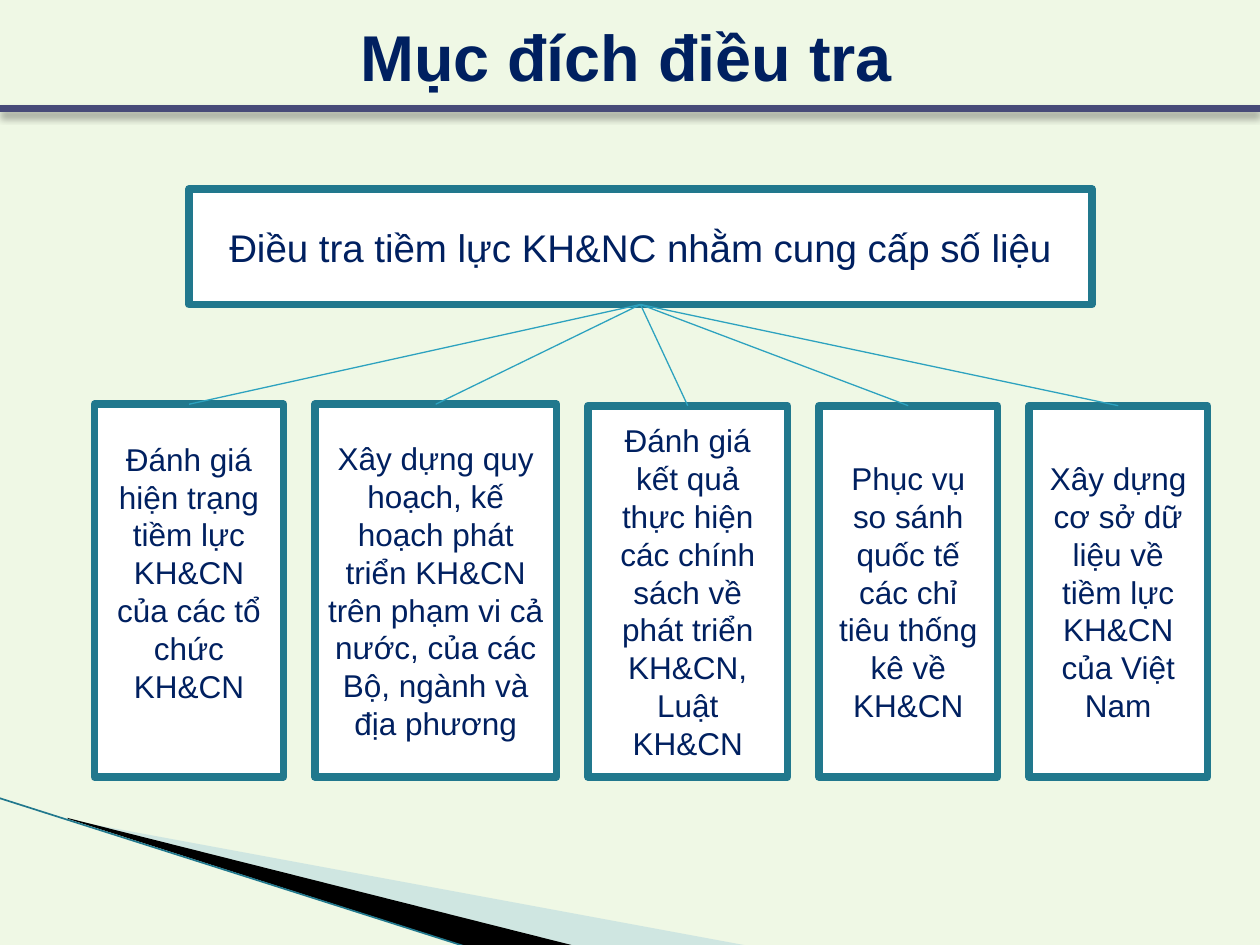
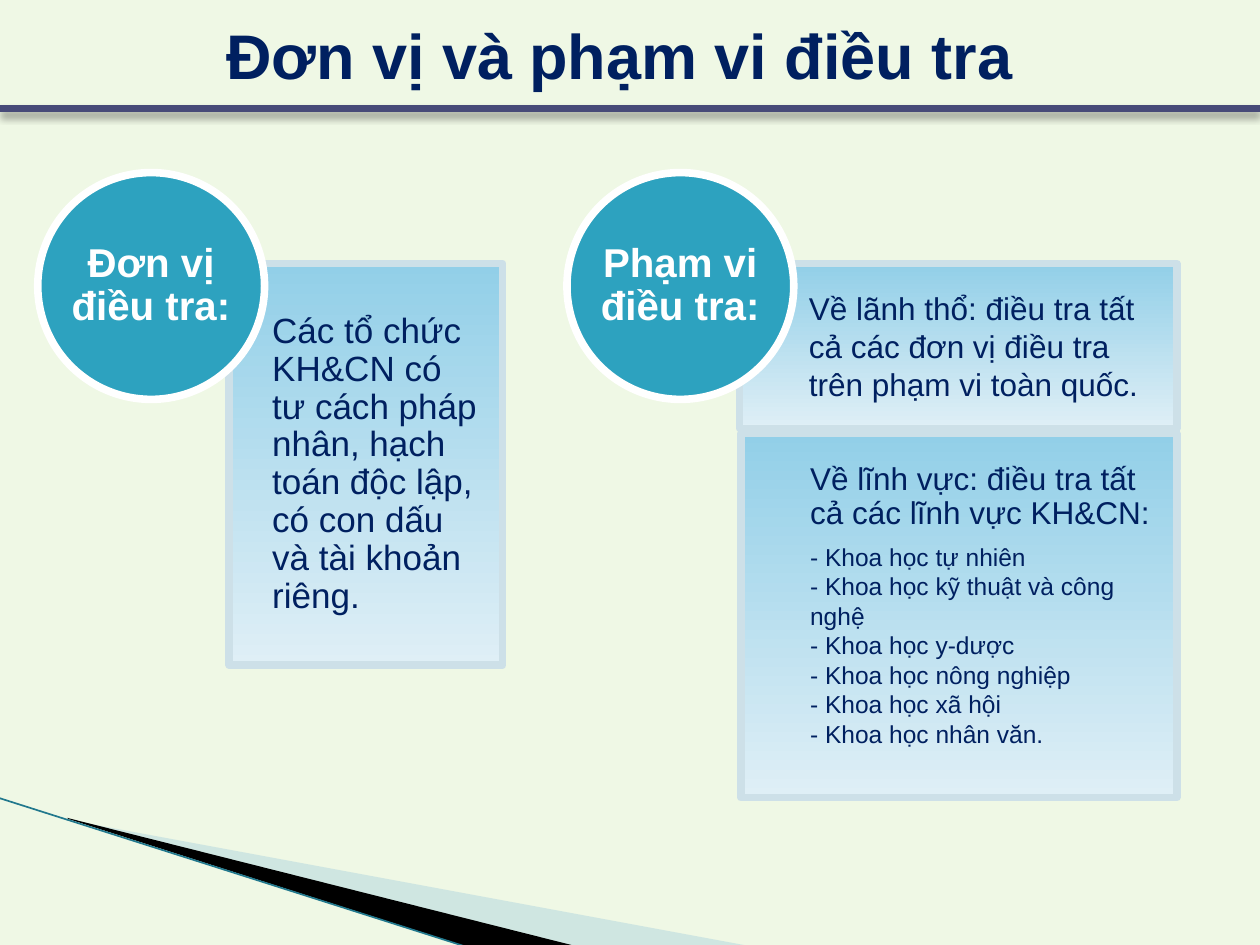
"""Build two slides on the purpose, units and scope of a science survey."""
from lxml import etree
from pptx import Presentation, util as u
from pptx.dml.color import RGBColor
from pptx.enum import shapes, text
from pptx.oxml import parse_xml
from pptx.oxml.ns import nsdecls, qn

rgb = RGBColor.from_string
NAVY, WHITE, TEAL, DARK_TEAL = "002060", "FFFFFF", "2DA2BF", "21788D"
CENTER, LEFT = text.PP_ALIGN.CENTER, text.PP_ALIGN.LEFT
RECT, OVAL = shapes.MSO_SHAPE.RECTANGLE, shapes.MSO_SHAPE.OVAL
STRAIGHT = shapes.MSO_CONNECTOR.STRAIGHT

prs = Presentation()
prs.slide_width, prs.slide_height = u.Inches(10), u.Inches(7.5)
U = prs.slide_width // 120


def write(sp, lines, size=18, color=NAVY, bold=False, align=CENTER,
          spacing=1.0, after=0, insets=(1.2, 0.6, 1.2, 0.6)):
    """Fill a shape with paragraphs; a line may be a (text, format) pair."""
    tf = sp.text_frame
    tf.word_wrap = True
    tf.auto_size = text.MSO_AUTO_SIZE.NONE
    tf.vertical_anchor = text.MSO_ANCHOR.MIDDLE
    tf.margin_left, tf.margin_top, tf.margin_right, tf.margin_bottom = (
        round(v * U) for v in insets)
    for i, line in enumerate(lines):
        p = tf.paragraphs[0] if i == 0 else tf.add_paragraph()
        words, fmt = line if isinstance(line, tuple) else (line, {})
        p.alignment = align
        p.line_spacing = fmt.get("spacing", spacing)
        p.space_after = u.Pt(fmt.get("after", after))
        r = p.add_run()
        r.text = words
        r.font.name, r.font.bold = "Arial", bold
        r.font.size = u.Pt(fmt.get("size", size))
        r.font.color.rgb = rgb(color)


def box(s, kind, grid, fill, line):
    """Add an outlined shape on the grid; a pair of fills makes a gradient."""
    sp = s.shapes.add_shape(kind, *(round(v * U) for v in grid))
    sp.shadow.inherit = False
    if isinstance(fill, tuple):
        sp.fill.gradient()
        sp.fill.gradient_angle = 270
        for stop, c in zip(sp.fill.gradient_stops, fill):
            stop.color.rgb = rgb(c)
    else:
        sp.fill.solid()
        sp.fill.fore_color.rgb = rgb(fill)
    sp.line.color.rgb = rgb(line)
    sp.line.width = u.Pt(4.33)
    return sp


master = prs.slide_master
master.background.fill.solid()
master.background.fill.fore_color.rgb = rgb("EFF8E5")

titles = [("Mục đích điều tra", 37, (5.64, 0.36, 108, 9.96)),
          ("Đơn vị và phạm vi điều tra", 36, (0, 0, 118, 10.32))]
slides = []
for words, size, grid in titles:
    s = prs.slides.add_slide(prs.slide_layouts[5])
    sp = s.shapes.title
    sp.left, sp.top, sp.width, sp.height = (round(v * U) for v in grid)
    write(sp, [words], size=size, bold=True)
    slides.append(s)
purpose, scope = slides

decor = []
wedges = [("A0CBDC", 40, [(6.6, 78.1), (71.4, 90.1), (54.7, 90.1), (6.6, 78)]),
          ("000000", 100, [(6.4, 77.9), (54.8, 90.1), (44.6, 90.2), (6.5, 78)])]
for color, alpha, points in wedges:
    start, *rest = [(round(x * U), round(y * U)) for x, y in points]
    builder = purpose.shapes.build_freeform(*start)
    builder.add_line_segments(rest, close=True)
    sp = builder.convert_to_shape()
    sp.shadow.inherit = False
    sp.line.fill.background()
    sp.fill.solid()
    sp.fill.fore_color.rgb = rgb(color)
    clr = sp._element.spPr.find(".//" + qn("a:srgbClr"))
    etree.SubElement(clr, qn("a:alpha"), val=str(alpha * 1000))
    decor.append(sp)

rules = [((-0.1, 76, 44.5, 90.2), DARK_TEAL, 0.95, ""),
         ((0, 10.32, 120, 10.32), "474B78", 4.33,
          '<a:outerShdw blurRad="50800" dist="38100" dir="5400000">'
          '<a:srgbClr val="000000"><a:alpha val="35000"/></a:srgbClr></a:outerShdw>')]
for ends, color, width, shadow in rules:
    cx = purpose.shapes.add_connector(STRAIGHT, *(round(v * U) for v in ends))
    cx.line.color.rgb = rgb(color)
    cx.line.width = u.Pt(width)
    cx._element.spPr.append(parse_xml(
        f'<a:effectLst {nsdecls("a")}>{shadow}</a:effectLst>'))
    decor.append(cx)
for sp in decor:
    master.shapes._spTree.append(sp._element)

head = box(purpose, RECT, (18, 18, 86, 11), WHITE, DARK_TEAL)
write(head, ["Điều tra tiềm lực KH&NC nhằm cung cấp số liệu"], size=22)
goals = [
    (18, 38.5, 4.1, "Đánh giá hiện trạng tiềm lực KH&CN của các tổ chức KH&CN"),
    (23, 38.5, 0.6, "Xây dựng quy hoạch, kế hoạch phát triển KH&CN trên phạm vi "
                    "cả nước, của các Bộ, ngành và địa phương"),
    (19, 38.64, 0.6, "Đánh giá kết quả thực hiện các chính sách về phát triển "
                     "KH&CN, Luật KH&CN"),
    (17, 38.64, 0.6, "Phục vụ so sánh quốc tế các chỉ tiêu thống kê về KH&CN"),
    (17, 38.64, 0.6, "Xây dựng cơ sở dữ liệu về tiềm lực KH&CN của Việt Nam")]
x, gap, bottom = 9, 3, 74
for width, top, inset, words in goals:
    goal = box(purpose, RECT, (x, top, width, bottom - top), WHITE, DARK_TEAL)
    write(goal, [words], insets=(1.2, 0.6, 1.2, inset))
    cx = purpose.shapes.add_connector(STRAIGHT, 0, 0, 0, 0)
    cx.begin_connect(head, 2)
    cx.end_connect(goal, 0)
    cx.line.color.rgb = rgb(TEAL)
    cx.line.width = u.Pt(0.75)
    etree.SubElement(cx._element.spPr, qn("a:effectLst"))
    x += width + gap

fields = ["tự nhiên", "kỹ thuật và công nghệ", "y-dược", "nông nghiệp",
          "xã hội", "nhân văn."]
panels = [
    ((21.84, 25.08, 26.04, 38.28), (4.08, 1.92, 1.92, 1.92),
     [("Các tổ chức KH&CN có tư cách pháp nhân, hạch toán độc lập, "
       "có con dấu và tài khoản riêng.", {"size": 20, "spacing": 0.9})]),
    ((70.44, 25.08, 41.64, 15.72), (6.6, 1.68, 1.68, 1.68),
     ["Về lãnh thổ: điều tra tất cả các đơn vị điều tra trên phạm vi toàn quốc."]),
    ((70.56, 41.28, 41.52, 34.68), (6.6, 1.68, 1.68, 3.6),
     [("Về lĩnh vực: điều tra tất cả các lĩnh vực KH&CN:",
       {"spacing": 0.9, "after": 6.3})]
     + [(f"- Khoa học {field}", {"size": 14}) for field in fields])]
for grid, insets, lines in panels:
    panel = box(scope, RECT, grid, ("92CFE8", "DFEFF6"), "CDE0E8")
    write(panel, lines, align=LEFT, insets=insets)

for x, words in [(3.6, "Đơn vị điều tra:"), (54, "Phạm vi điều tra:")]:
    circle = box(scope, OVAL, (x, 16.44, 21.6, 21.6), TEAL, WHITE)
    write(circle, [words], size=23, color=WHITE, bold=True, spacing=0.9,
          insets=(0, 0, 0, 0))

prs.save("out.pptx")
